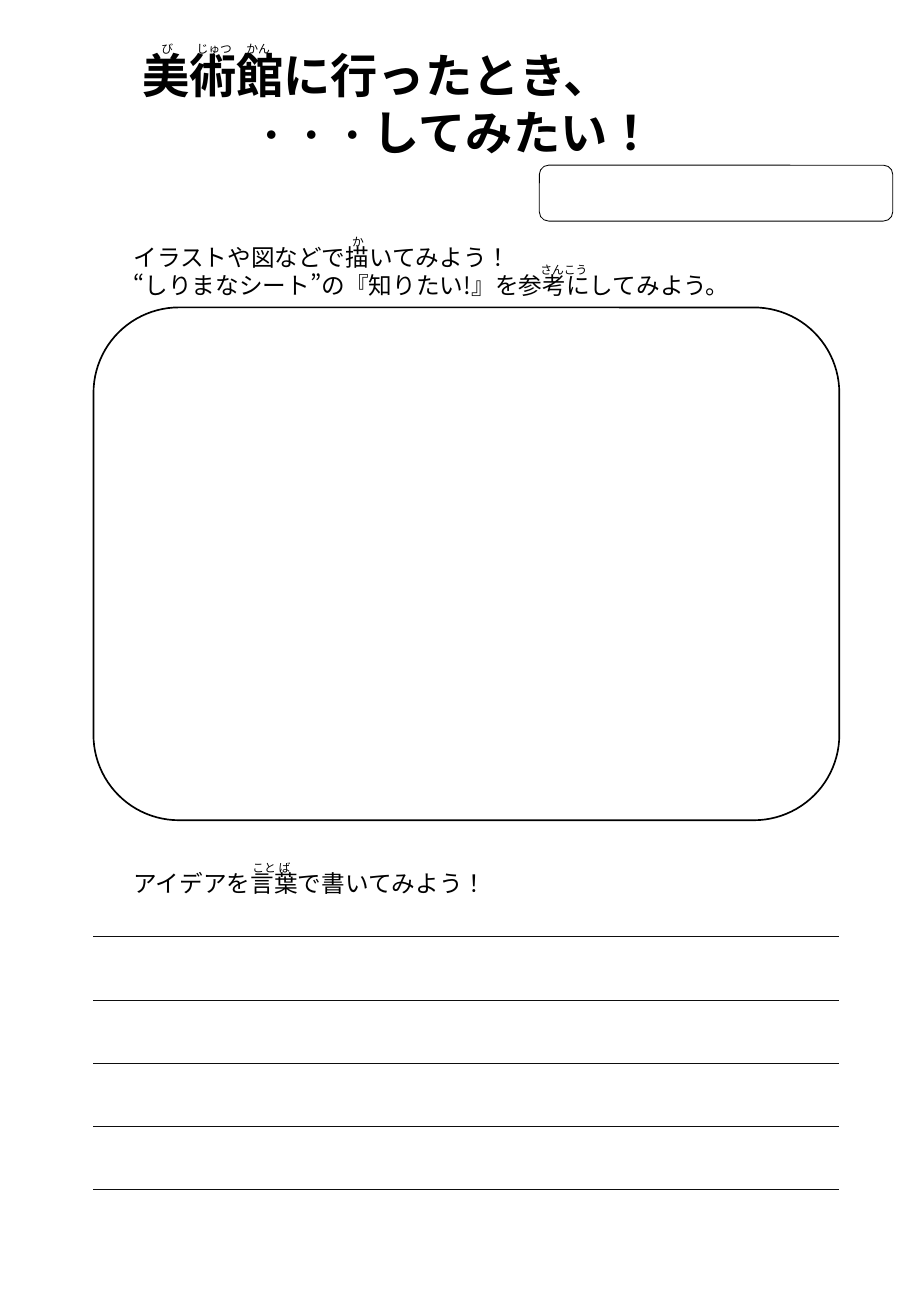
from dataclasses import dataclass

from lxml.etree import SubElement
from pptx import Presentation
from pptx.dml.color import RGBColor
from pptx.enum.lang import MSO_LANGUAGE_ID
from pptx.enum.shapes import MSO_CONNECTOR, MSO_SHAPE
from pptx.enum.text import MSO_ANCHOR, MSO_AUTO_SIZE, PP_ALIGN
from pptx.oxml.ns import qn
from pptx.util import Inches, Pt


@dataclass(frozen=True)
class Theme:
    font: str = "Noto Sans CJK JP"
    ink: RGBColor = RGBColor(0x00, 0x00, 0x00)
    rule: RGBColor = RGBColor(0x0D, 0x0D, 0x0D)
    title: int = 28
    dots: int = 24
    body: int = 14
    reading: int = 7
    thick: float = 1
    thin: float = 0.5
    spacing: float = 1.0


THEME = Theme()


def apply(target, formats):
    for name, value in formats.items():
        setattr(target, name, value)


def place(shape, left, top, width, height):
    apply(shape, {"left": Inches(left), "top": Inches(top),
                  "width": Inches(width), "height": Inches(height)})


def write(frame, lines):
    """Fill a frame; each line is a list of (wording, size, bold)."""
    apply(frame, {"word_wrap": True, "auto_size": MSO_AUTO_SIZE.NONE,
                  "vertical_anchor": MSO_ANCHOR.TOP})
    for number, line in enumerate(lines):
        paragraph = frame.add_paragraph() if number else frame.paragraphs[0]
        apply(paragraph, {"alignment": PP_ALIGN.LEFT, "line_spacing": THEME.spacing})
        for wording, size, bold in line:
            run = paragraph.add_run()
            run.text = wording
            apply(run.font, {"size": Pt(size), "bold": bold, "name": THEME.font,
                             "language_id": MSO_LANGUAGE_ID.JAPANESE})
            run.font.color.rgb = THEME.ink
            # East Asian typeface for the Japanese letters
            SubElement(run.font._element, qn("a:ea"), typeface=THEME.font)


def add_text(slide, box, wordings, size):
    text = slide.shapes.add_textbox(*map(Inches, box))
    write(text.text_frame, [[(wording, size, False)] for wording in wordings])
    return text


def add_reading(slide, left, top, reading, width=0.79):
    return add_text(slide, (left, top, width, 0.22), [reading], THEME.reading)


def add_frame(slide, box, weight):
    frame = slide.shapes.add_shape(MSO_SHAPE.ROUNDED_RECTANGLE, *map(Inches, box))
    frame.shadow.inherit = False
    frame.fill.background()
    frame.line.color.rgb = THEME.ink
    frame.line.width = Pt(weight)


def add_heading(slide, left, top, width, height):
    title = slide.shapes.title
    place(title, left, top, width, height)
    write(title.text_frame, [
        [("美術館に行ったとき、", THEME.title, True)],
        [("・・・", THEME.dots, False), ("してみたい！", THEME.title, True)],
    ])
    second_line = title.text_frame.paragraphs[1]._p.get_or_add_pPr()
    second_line.set("marL", str(Inches(0.9)))
    second_line.set("indent", "0")

    # Readings above 美, 術 and 館, spaced by tab stops
    readings = add_reading(slide, left + 0.16, top - 0.04, "び\tじゅつ\tかん", 1.3)
    properties = readings.text_frame.paragraphs[0]._p.get_or_add_pPr()
    stops = SubElement(properties, qn("a:tabLst"))
    for stop in (0.29, 0.7):
        SubElement(stops, qn("a:tab"), pos=str(Inches(stop)), algn="l")


def add_drawing_area(slide, left, top, width, height):
    add_text(slide, (left + 0.23, top - 0.58, 5.37, 0.58), [
        "イラストや図などで描いてみよう！",
        "“しりまなシート”の『知りたい!』を参考にしてみよう。",
    ], THEME.body)
    add_reading(slide, left + 2.03, top - 0.65, "か")
    add_reading(slide, left + 3.58, top - 0.42, "さんこう")
    add_frame(slide, (left, top, width, height), THEME.thick)


def add_writing_area(slide, left, top, width, rows=5, pitch=0.52):
    add_text(slide, (left + 0.23, top, 4.81, 0.34),
             ["アイデアを言葉で書いてみよう！"], THEME.body)
    add_reading(slide, left + 1.21, top - 0.07, "こと ば")
    for row in range(rows):
        y = Inches(top + 0.61 + row * pitch)
        rule = slide.shapes.add_connector(
            MSO_CONNECTOR.STRAIGHT, Inches(left), y, Inches(left + width), y)
        rule.line.color.rgb = THEME.rule
        rule.line.width = Pt(THEME.thin)
        SubElement(rule._element.spPr, qn("a:effectLst"))


def main():
    presentation = Presentation()
    apply(presentation, {"slide_width": Inches(7.5), "slide_height": Inches(10.83)})
    slide = presentation.slides.add_slide(presentation.slide_layouts.get_by_name("Title Only"))

    add_heading(slide, 1.07, 0.33, 6.35, 1.04)
    # Box for the pupil's name
    add_frame(slide, (4.44, 1.36, 2.91, 0.46), THEME.thin)
    add_drawing_area(slide, 0.77, 2.53, 6.14, 4.22)
    add_writing_area(slide, 0.77, 7.1, 6.14)

    presentation.save("out.pptx")


if __name__ == "__main__":
    main()
